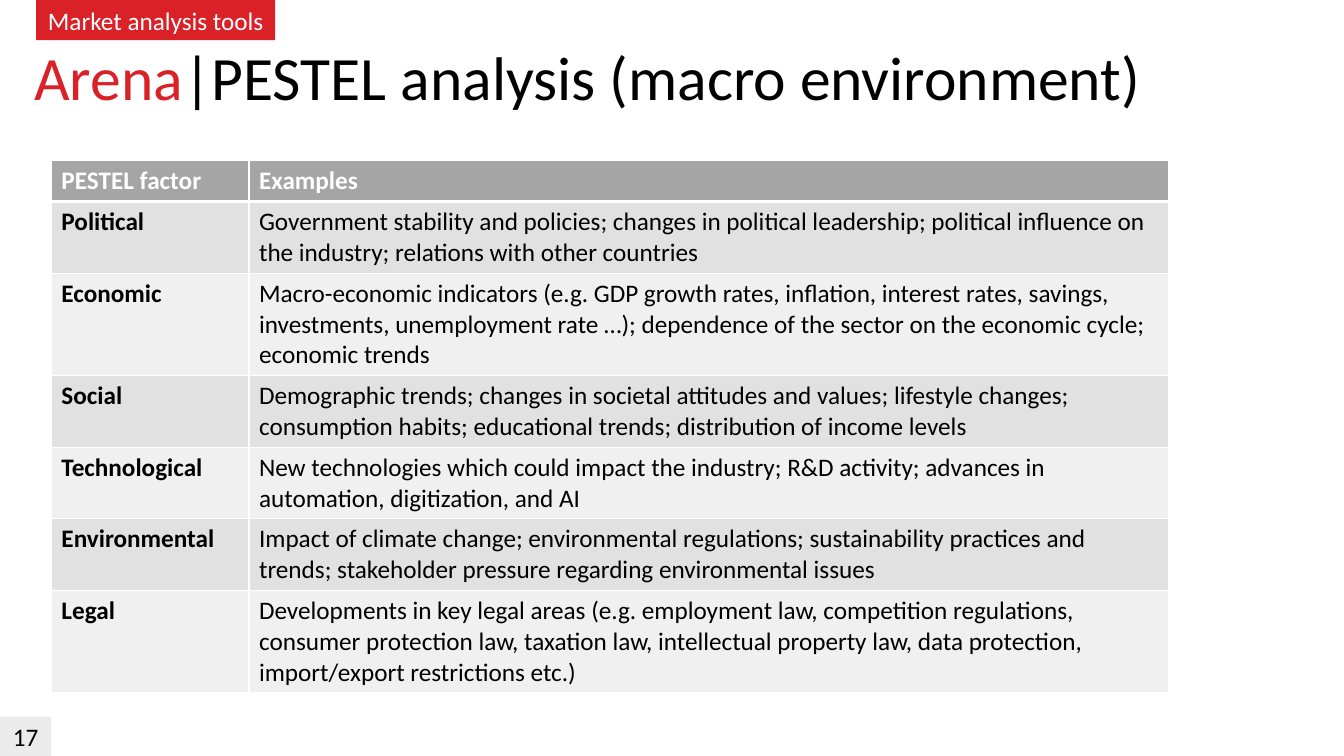
from lxml import etree
from pptx import Presentation
from pptx import util as u
from pptx.dml.color import RGBColor
from pptx.enum import shapes, text
from pptx.oxml import ns

RED = RGBColor(0xDA, 0x21, 0x28)
BLACK = RGBColor(0, 0, 0)
WHITE = RGBColor(0xFF, 0xFF, 0xFF)
NUMBER_GRAY = RGBColor(0xBF, 0xBF, 0xBF)
HEADER_GRAY = RGBColor(0xA5, 0xA5, 0xA5)
BANDS = (RGBColor(0xE1, 0xE1, 0xE1), RGBColor(0xF0, 0xF0, 0xF0))

FACTORS = [
    ("PESTEL factor", "Examples"),
    ("Political", "Government stability and policies; changes in political leadership; "
     "political influence on the industry; relations with other countries"),
    ("Economic", "Macro-economic indicators (e.g. GDP growth rates, inflation, interest rates, savings,\n"
     "investments, unemployment rate …); dependence of the sector on the economic cycle; economic trends"),
    ("Social", "Demographic trends; changes in societal attitudes and values; lifestyle changes; "
     "consumption habits; educational trends; distribution of income levels"),
    ("Technological", "New technologies which could impact the industry; R&D activity; advances in\n"
     "automation, digitization, and AI"),
    ("Environmental", "Impact of climate change; environmental regulations; sustainability practices and\n"
     "trends; stakeholder pressure regarding environmental issues"),
    ("Legal", "Developments in key legal areas (e.g. employment law, competition regulations, "
     "consumer protection law, taxation law, intellectual property law, data protection, "
     "import/export restrictions etc.)"),
]


def add_run(paragraph, content, size=18, color=BLACK, bold=False, font="Calibri"):
    run = paragraph.add_run()
    run.text = content
    run.font.name = font
    run.font.size = u.Pt(size)
    run.font.bold = bold
    run.font.color.rgb = color


def set_border(cell, side, width):
    properties = cell._tc.get_or_add_tcPr()
    line = etree.SubElement(properties, ns.qn(f"a:ln{side}"), w=str(u.Pt(width)))
    fill = etree.SubElement(line, ns.qn("a:solidFill"))
    etree.SubElement(fill, ns.qn("a:srgbClr"), val=str(WHITE))


class SlideBuilder:
    def __init__(self, presentation):
        self.slide = presentation.slides.add_slide(presentation.slide_layouts[5])

    def title(self, parts, left, top, width, height):
        shape = self.slide.shapes.title
        shape.left, shape.top = u.Inches(left), u.Inches(top)
        shape.width, shape.height = u.Inches(width), u.Inches(height)
        frame = shape.text_frame
        frame.auto_size = text.MSO_AUTO_SIZE.NONE
        frame.vertical_anchor = text.MSO_ANCHOR.MIDDLE
        paragraph = frame.paragraphs[0]
        paragraph.alignment = text.PP_ALIGN.LEFT
        paragraph.line_spacing = 0.9
        for content, color in parts:
            add_run(paragraph, content, size=44, color=color)

    def label(self, content, left, top, width, height, fill, color, opacity=100):
        shape = self.slide.shapes.add_shape(
            shapes.MSO_SHAPE.RECTANGLE, u.Inches(left), u.Inches(top),
            u.Inches(width), u.Inches(height))
        shape.shadow.inherit = False
        shape.line.fill.background()
        shape.fill.solid()
        shape.fill.fore_color.rgb = fill
        if opacity < 100:
            fill_color = shape.element.spPr.find(ns.qn("a:solidFill"))[0]
            etree.SubElement(fill_color, ns.qn("a:alpha"), val=str(opacity * 1000))
        frame = shape.text_frame
        frame.word_wrap = True
        frame.vertical_anchor = text.MSO_ANCHOR.MIDDLE
        paragraph = frame.paragraphs[0]
        paragraph.alignment = text.PP_ALIGN.CENTER
        add_run(paragraph, content, color=color)

    def table(self, rows, left, top, column_widths, row_height):
        table = self.slide.shapes.add_table(
            len(rows), len(column_widths), u.Inches(left), u.Inches(top),
            u.Inches(sum(column_widths)), u.Inches(row_height * len(rows))).table
        for column, width in zip(table.columns, column_widths):
            column.width = u.Inches(width)
        for row_index, row in enumerate(rows):
            table.rows[row_index].height = u.Inches(row_height)
            for column_index, content in enumerate(row):
                self.cell(table.cell(row_index, column_index), content, row_index, column_index)

    def cell(self, cell, content, row_index, column_index):
        header = row_index == 0
        for side in "LRTB":
            thick = (header and side == "B") or (row_index == 1 and side == "T")
            set_border(cell, side, 3 if thick else 1)
        cell.fill.solid()
        cell.fill.fore_color.rgb = HEADER_GRAY if header else BANDS[(row_index - 1) % 2]
        frame = cell.text_frame
        for index, line in enumerate(content.split("\n")):
            paragraph = frame.add_paragraph() if index else frame.paragraphs[0]
            add_run(paragraph, line, color=WHITE if header else BLACK,
                    bold=header or column_index == 0)


def main():
    presentation = Presentation()
    presentation.slide_width = u.Inches(13.33)
    presentation.slide_height = u.Inches(7.5)
    builder = SlideBuilder(presentation)
    builder.title([("Arena", RED), ("|PESTEL analysis (macro environment)", BLACK)],
                  0.24, 0.07, 12.83, 1.45)
    builder.label("17", 0, 7.11, 0.51, 0.4, NUMBER_GRAY, BLACK, opacity=30)
    builder.table(FACTORS, 0.51, 1.59, (1.96, 9.12), 0.41)
    builder.label("Market analysis tools", 0.36, 0, 2.37, 0.4, RED, WHITE)
    presentation.save("out.pptx")


if __name__ == "__main__":
    main()
